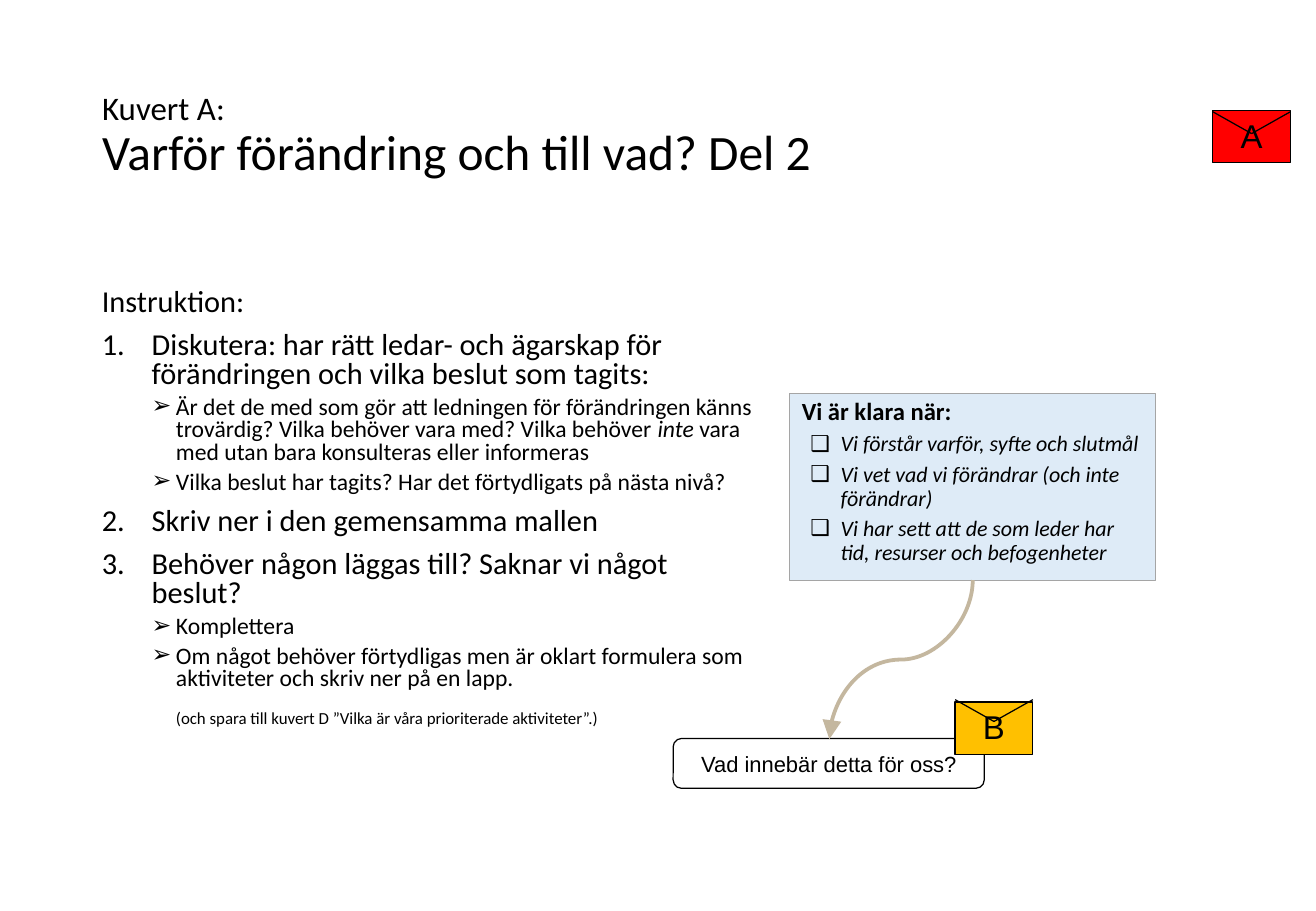
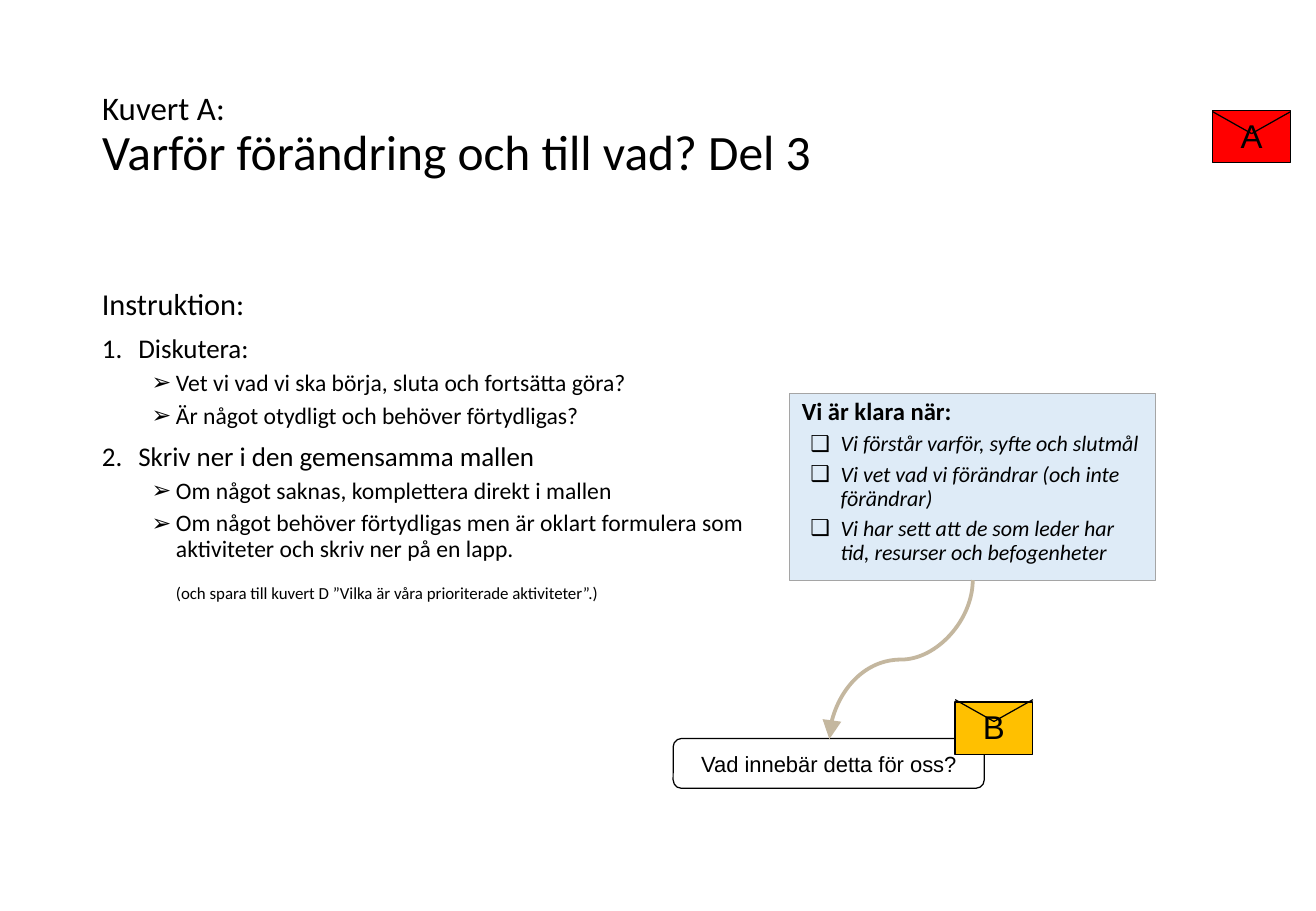
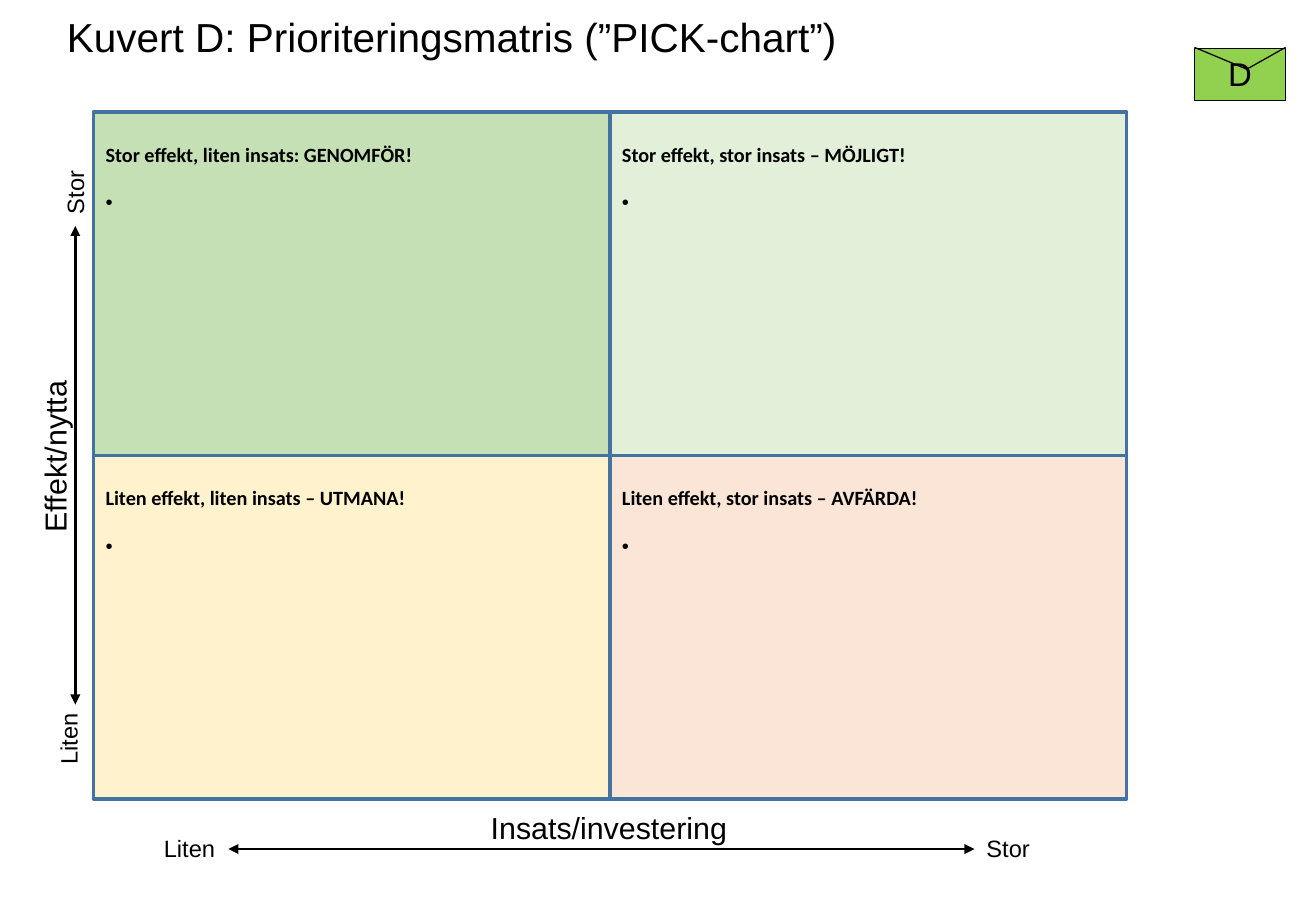
from itertools import product

from lxml.etree import SubElement
from pptx import Presentation
from pptx.dml.color import RGBColor
from pptx.enum.shapes import MSO_CONNECTOR, MSO_SHAPE
from pptx.enum.text import MSO_ANCHOR, MSO_AUTO_SIZE, PP_ALIGN
from pptx.oxml.ns import qn
from pptx.util import Inches, Pt

BLACK = RGBColor(0, 0, 0)
WHITE = RGBColor(255, 255, 255)
RED = RGBColor(0xFF, 0, 0)
AMBER = RGBColor(0xFF, 0xC0, 0)
LIME = RGBColor(0x92, 0xD0, 0x50)
PALE = RGBColor(0xDE, 0xEB, 0xF7)
GREY = RGBColor(0xA5, 0xA5, 0xA5)
SAND = RGBColor(0xC4, 0xB7, 0x9F)
BLUE = RGBColor(0x43, 0x73, 0x9E)

SANS = "Calibri"
PLAIN = "Arial"

SAVE = "Om något behöver förtydligas men är oklart formulera som aktiviteter och skriv ner på en lapp."
NOTE = "(och spara till kuvert D ”Vilka är våra prioriterade aktiviteter”.)"
PART_TWO = [
    ("head", "Instruktion:"),
    ("step", "Diskutera: har rätt ledar- och ägarskap för förändringen och vilka beslut som tagits:"),
    ("point", "Är det de med som gör att ledningen för förändringen känns trovärdig? "
              "Vilka behöver vara med? Vilka behöver *inte* vara med utan bara konsulteras eller informeras"),
    ("point", "Vilka beslut har tagits? Har det förtydligats på nästa nivå?"),
    ("step", "Skriv ner i den gemensamma mallen"),
    ("step", "Behöver någon läggas till? Saknar vi något beslut?"),
    ("point", "Komplettera"),
    ("point", SAVE),
    ("note", NOTE),
]
PART_THREE = [
    ("head", "Instruktion:"),
    ("step", "Diskutera:"),
    ("point", "Vet vi vad vi ska börja, sluta och fortsätta göra?"),
    ("point", "Är något otydligt och behöver förtydligas?"),
    ("step", "Skriv ner i den gemensamma mallen"),
    ("point", "Om något saknas, komplettera direkt i mallen"),
    ("point", SAVE),
    ("note", NOTE),
]
CHECKS = [
    "Vi förstår varför, syfte och slutmål",
    "Vi vet vad vi förändrar (och inte förändrar)",
    "Vi har sett att de som leder har tid, resurser och befogenheter",
]
FIELDS = [
    ("Stor effekt, liten insats: GENOMFÖR!", RGBColor(0xC5, 0xE0, 0xB4)),
    ("Stor effekt, stor insats – MÖJLIGT!", RGBColor(0xE2, 0xF0, 0xD9)),
    ("Liten effekt, liten insats – UTMANA!", RGBColor(0xFF, 0xF2, 0xCC)),
    ("Liten effekt, stor insats – AVFÄRDA!", RGBColor(0xFB, 0xE5, 0xD6)),
]


def style(run, size, face=SANS, bold=False, slant=False):
    font = run.font
    font.size, font.name = Pt(size), face
    font.bold, font.italic = bold, slant
    font.color.rgb = BLACK


def write(frame, text, size, face=SANS, bold=False, slant=False, align=PP_ALIGN.LEFT,
          space=1.0, before=0, left=0, hang=0, mark=None, level=0):
    para = frame.paragraphs[0]
    if para.runs:
        para = frame.add_paragraph()
    para.level = level
    para.alignment = align
    para.line_spacing = space
    para.space_before = Pt(before)
    props = para._p.get_or_add_pPr()
    props.set("marL", str(Inches(left)))
    props.set("indent", str(Inches(-hang)))
    if mark == "1.":
        SubElement(props, qn("a:buAutoNum")).set("type", "arabicPeriod")
    elif mark:
        SubElement(props, qn("a:buFont")).set("typeface", PLAIN)
        SubElement(props, qn("a:buChar")).set("char", mark)
    else:
        SubElement(props, qn("a:buNone"))
    for spot, part in enumerate(text.split("*")):
        run = para.add_run()
        run.text = part
        style(run, size, face, bold, slant or spot % 2 == 1)


def block(shapes, kind, left, top, width, height, fill, edge=BLACK, weight=0.75,
          anchor=MSO_ANCHOR.TOP, tight=False):
    shape = shapes.add_shape(kind, Inches(left), Inches(top), Inches(width), Inches(height))
    shape.shadow.inherit = False
    shape.fill.solid()
    shape.fill.fore_color.rgb = fill
    shape.line.color.rgb = edge
    shape.line.width = Pt(weight)
    frame = shape.text_frame
    frame.word_wrap = True
    frame.vertical_anchor = anchor
    if tight:
        frame.margin_left = frame.margin_right = Inches(0.08)
        frame.margin_top = frame.margin_bottom = Inches(0.04)
    return shape


def line(shapes, start, end, color=BLACK, weight=0.75, heads=(), kind=MSO_CONNECTOR.STRAIGHT,
         scale="med"):
    link = shapes.add_connector(kind, *map(Inches, start + end))
    link.line.color.rgb = color
    link.line.width = Pt(weight)
    for head in heads:
        tip = SubElement(link.line._get_or_add_ln(), qn(head))
        tip.set("type", "triangle")
        tip.set("w", scale)
        tip.set("len", scale)
    SubElement(link._element.spPr, qn("a:effectLst"))
    return link


def letter(slide, sign, fill, left, top, flap, width=0.64, tip=0.32):
    shapes = slide.shapes.add_group_shape().shapes
    cover = block(shapes, MSO_SHAPE.RECTANGLE, left, top, width, 0.43, fill, tight=True)
    write(cover.text_frame, sign, 19.5, PLAIN, align=PP_ALIGN.CENTER)
    for edge in (left, left + width):
        line(shapes, (edge, flap), (left + tip, flap + 0.18))


def label(slide, text, size, left, top, width, height, turn=0):
    box = slide.shapes.add_textbox(Inches(left), Inches(top), Inches(width), Inches(height))
    box.rotation = turn
    box.text_frame.word_wrap = False
    box.text_frame.auto_size = MSO_AUTO_SIZE.SHAPE_TO_FIT_TEXT
    write(box.text_frame, text, size, PLAIN)
    return box


def title(deck, rows, left, top, width, height, face, anchor, space):
    slide = deck.slides.add_slide(deck.slide_layouts[5])
    head = slide.shapes.title
    head.left, head.top = Inches(left), Inches(top)
    head.width, head.height = Inches(width), Inches(height)
    frame = head.text_frame
    frame.auto_size = MSO_AUTO_SIZE.NONE
    frame.word_wrap = True
    frame.vertical_anchor = anchor
    for text, size in rows:
        write(frame, text, size, face, space=space)
    return slide


def guide(slide, items, space, size, left):
    box = slide.shapes.add_textbox(Inches(0.74), Inches(2.33), Inches(5.6), Inches(3.87))
    frame = box.text_frame
    frame.word_wrap = True
    kinds = {
        "head": dict(size=18),
        "step": dict(size=size, before=8.1, left=left, hang=left, mark="1."),
        "point": dict(size=14, before=4.1, left=0.61, hang=0.2, mark="➢", level=1),
        "note": dict(size=10, before=15 * space, left=0.61, level=1),
    }
    for kind, text in items:
        write(frame, text, space=space, **kinds[kind])


def goals(slide):
    box = block(slide.shapes, MSO_SHAPE.RECTANGLE, 6.5, 3.24, 3.01, 1.54, PALE, GREY, 0.5)
    write(box.text_frame, "Vi är klara när:", 14.6, bold=True, space=0.9)
    for check in CHECKS:
        write(box.text_frame, check, 13, slant=True, space=0.9, before=4.1,
              left=0.32, hang=0.25, mark="❑", level=1)


def onward(slide):
    goal = block(slide.shapes, MSO_SHAPE.ROUNDED_RECTANGLE, 5.54, 6.08, 2.56, 0.41, WHITE,
                 anchor=MSO_ANCHOR.MIDDLE, tight=True)
    write(goal.text_frame, "Vad innebär detta för oss?", 13, PLAIN, align=PP_ALIGN.CENTER)
    letter(slide, "B", AMBER, 7.86, 5.78, 5.76)
    curve = line(slide.shapes, (6.76, 4.84), (8.07, 6.02), SAND, 2.25, ["a:tailEnd"],
                 MSO_CONNECTOR.CURVE, "lg")
    curve._element.spPr.find(qn("a:xfrm")).set("rot", str(90 * 60000))


def task(deck, part, items, space, size, left):
    rows = [("Kuvert A:", 19.5), (f"Varför förändring och till vad? Del {part}", 29.25)]
    slide = title(deck, rows, 0.74, 0.4, 9.34, 1.45, SANS, MSO_ANCHOR.MIDDLE, 0.9)
    guide(slide, items, space, size, left)
    goals(slide)
    onward(slide)
    letter(slide, "A", RED, 9.98, 0.91, 0.92)


def matrix(deck):
    rows = [("Kuvert D: Prioriteringsmatris (”PICK-chart”)", 24)]
    slide = title(deck, rows, 0.45, 0.05, 6.69, 0.5, PLAIN, MSO_ANCHOR.TOP, 1.0)
    wide, high = 4.25, 2.83
    for (row, col), (text, fill) in zip(product(range(2), repeat=2), FIELDS):
        field = block(slide.shapes, MSO_SHAPE.RECTANGLE, 0.77 + col * wide, 0.92 + row * high,
                      wide, high, fill, BLUE, 2.25)
        write(field.text_frame, text, 12, bold=True, space=2.0)
        write(field.text_frame, " ", 12, space=2.0, left=0.19, hang=0.19, mark="•")
    label(slide, "Insats/investering", 18, 3.94, 6.61, 2.17, 0.4)
    much = label(slide, "Stor", 14, 8.02, 6.82, 0.56, 0.34)
    less = label(slide, "Liten", 14, 1.25, 6.82, 0.63, 0.34)
    label(slide, "Effekt/nytta", 18, -0.28, 3.55, 1.46, 0.4, 270)
    label(slide, "Stor", 14, 0.34, 1.41, 0.56, 0.34, 270)
    label(slide, "Liten", 14, 0.25, 5.91, 0.63, 0.34, 270)
    ends = ["a:headEnd", "a:tailEnd"]
    axis = line(slide.shapes, (1.88, 6.99), (8.02, 6.99), weight=1.5, heads=ends)
    axis.begin_connect(less, 3)
    axis.end_connect(much, 1)
    line(slide.shapes, (0.62, 5.8), (0.62, 1.86), weight=1.5, heads=ends)
    letter(slide, "D", LIME, 9.83, 0.4, 0.39, 0.75, 0.43)


def main():
    deck = Presentation()
    deck.slide_width, deck.slide_height = Inches(10.83), Inches(7.5)
    task(deck, 2, PART_TWO, 0.8, 18, 0.41)
    task(deck, 3, PART_THREE, 0.9, 16, 0.3)
    matrix(deck)
    deck.save("out.pptx")


if __name__ == "__main__":
    main()
